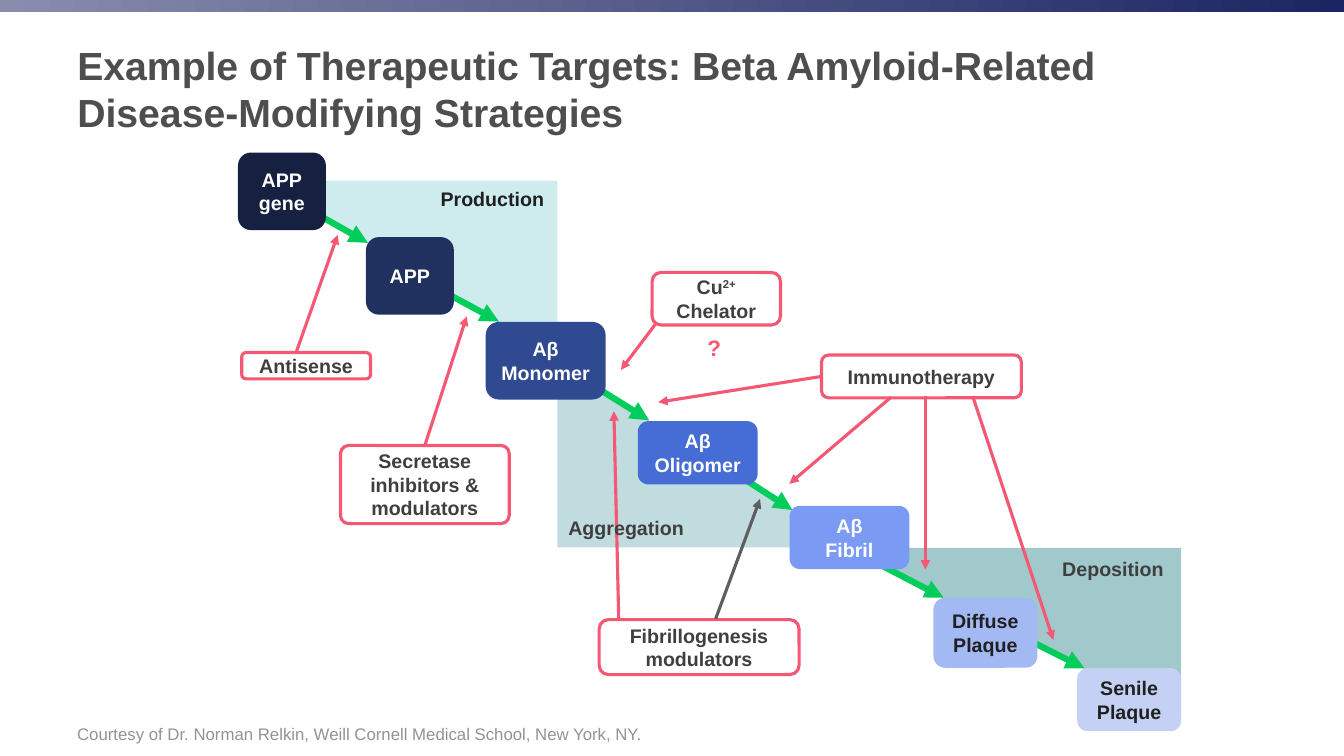
"""Build the slide on beta amyloid therapeutic targets."""
from typing import NamedTuple, Optional

from lxml.etree import SubElement
from pptx import Presentation
from pptx.dml.color import RGBColor
from pptx.enum.shapes import MSO_CONNECTOR, MSO_SHAPE
from pptx.enum.text import MSO_ANCHOR as ANCHOR, PP_ALIGN as ALIGN
from pptx.oxml.ns import qn
from pptx.util import Pt

FONT = "Arial"
BAR_START = RGBColor(0x89, 0x8C, 0xAD)
BAR_END = RGBColor(0x1C, 0x24, 0x63)
TITLE_GREY = RGBColor(0x4D, 0x4E, 0x4D)
DARK = RGBColor(0x3F, 0x3F, 0x3F)
BLACK = RGBColor(0x20, 0x20, 0x20)
WHITE = RGBColor(0xFF, 0xFF, 0xFF)
CREDIT_GREY = RGBColor(0x93, 0x93, 0x93)
PINK = RGBColor(0xF4, 0x58, 0x75)
GREEN = RGBColor(0x00, 0xCD, 0x5C)
ARROW_GREY = RGBColor(0x5E, 0x5E, 0x5E)
PRODUCTION = RGBColor(0xCE, 0xEC, 0xEE)
AGGREGATION = RGBColor(0xC0, 0xDC, 0xDE)
DEPOSITION = RGBColor(0xA1, 0xC8, 0xCA)


class Box(NamedTuple):
    left: float
    top: float
    width: float
    height: float


class Region(NamedTuple):
    box: Box
    fill: RGBColor
    turn: int


class Label(NamedTuple):
    text: str
    box: Box
    color: RGBColor = DARK
    size: int = 14


class Stage(NamedTuple):
    text: str
    box: Box
    fill: RGBColor
    color: RGBColor = WHITE


class Therapy(NamedTuple):
    text: str
    box: Box
    corner: float = 0.167


class Arrow(NamedTuple):
    x1: float
    y1: float
    x2: float
    y2: float
    color: RGBColor = PINK
    width: float = 2.25
    source: Optional[str] = None
    site: int = 0


REGIONS = [
    Region(Box(398.2, 260, 211, 131), AGGREGATION, 0),
    Region(Box(604, 391.4, 239.6, 121), DEPOSITION, 180),
    Region(Box(187.2, 129, 211, 126), PRODUCTION, 180),
]
LABELS = [
    Label("Production", Box(307.5, 129.8, 88.5, 24.5), BLACK),
    Label("Aggregation", Box(398.8, 364.4, 97, 24.5)),
    Label("Deposition", Box(749.3, 394, 91.4, 24.5)),
    Label("?", Box(496.6, 235, 27, 26.6), PINK, 16),
]
STAGES = [
    Stage("APP\ngene", Box(170, 109, 62.8, 55.4), RGBColor(0x16, 0x20, 0x40)),
    Stage("APP", Box(261.4, 169.4, 62.8, 55.4), RGBColor(0x20, 0x31, 0x5F)),
    Stage("Aβ\nMonomer", Box(347, 230, 85.6, 55.4), RGBColor(0x30, 0x4A, 0x91)),
    Stage("Aβ\nOligomer", Box(455.6, 300.8, 85.6, 45.2), RGBColor(0x46, 0x6C, 0xD5)),
    Stage("Aβ\nFibril", Box(564, 361.3, 85.6, 45.2), RGBColor(0x7A, 0x9A, 0xF4)),
    Stage("Diffuse\nPlaque", Box(666.8, 427, 74.2, 50), RGBColor(0xA3, 0xB9, 0xF4), BLACK),
    Stage("Senile\nPlaque", Box(769.5, 477.3, 74.2, 45), RGBColor(0xC4, 0xD1, 0xF4), BLACK),
]
THERAPIES = [
    Therapy("Antisense", Box(172.7, 251.8, 92, 18.8)),
    Therapy("Secretase\ninhibitors &\nmodulators", Box(243.2, 318.2, 120.5, 55.8), 0.104),
    Therapy("Cu^2+\nChelator", Box(465.8, 194.6, 91.7, 37.5)),
    Therapy("Immunotherapy", Box(586.8, 253.6, 142.8, 30.6)),
    Therapy("Fibrillogenesis\nmodulators", Box(428, 442.6, 142.8, 39.3)),
]
ARROWS = [
    Arrow(229.7, 154.8, 262.8, 173.5, GREEN, 4.5),
    Arrow(319, 209.5, 356.4, 229.7, GREEN, 4.5),
    Arrow(425.5, 276.5, 463.7, 300.2, GREEN, 4.5),
    Arrow(531.4, 342, 566, 364.3, GREEN, 4.5),
    Arrow(627, 402.5, 674, 427, GREEN, 4.5),
    Arrow(740.2, 460, 774.7, 477.4, GREEN, 4.5),
    Arrow(211.7, 251.3, 241.2, 167.8),
    Arrow(303.5, 318.2, 333.4, 226, source=THERAPIES[1].text, site=0),
    Arrow(468, 231.8, 443.5, 264.2),
    Arrow(586.8, 268.9, 470.2, 287.3, source=THERAPIES[3].text, site=1),
    Arrow(636.5, 283.7, 563.8, 345.6),
    Arrow(661, 283, 661, 406.8),
    Arrow(694.8, 283, 752.4, 457.2),
    Arrow(442, 442.8, 438.5, 293.8),
    Arrow(511.2, 442, 542.9, 356.4, ARROW_GREY),
]


def points(*values: float) -> list:
    return [Pt(v) for v in values]


def write(s, text: str, *, size=14, color=DARK, bold=True, align=ALIGN.CENTER,
          anchor=ANCHOR.MIDDLE, wrap=True, inset=(7.2, 3.6)) -> None:
    """Write lines as paragraphs; a caret starts a superscript."""
    tf = s.text_frame
    tf.word_wrap = wrap
    tf.vertical_anchor = anchor
    tf.margin_left = tf.margin_right = Pt(inset[0])
    tf.margin_top = tf.margin_bottom = Pt(inset[1])
    for i, line in enumerate(text.split("\n")):
        p = tf.add_paragraph() if i else tf.paragraphs[0]
        p.alignment = align
        for j, part in enumerate(line.split("^")):
            r = p.add_run()
            r.text = part
            r.font.name, r.font.size, r.font.bold = FONT, Pt(size), bold
            r.font.color.rgb = color
            if j:
                r._r.get_or_add_rPr().set("baseline", "30000")


def add_box(shapes, kind: MSO_SHAPE, box: Box, fill: Optional[RGBColor] = None,
            line: Optional[RGBColor] = None):
    s = shapes.add_shape(kind, *points(*box))
    s.shadow.inherit = False
    if fill is None:
        s.fill.background()
    else:
        s.fill.solid()
        s.fill.fore_color.rgb = fill
    if line is None:
        s.line.fill.background()
    else:
        s.line.color.rgb = line
        s.line.width = Pt(2.25)
    return s


def add_arrow(shapes, arrow: Arrow, sources: dict) -> None:
    s = shapes.add_connector(MSO_CONNECTOR.STRAIGHT, *points(*arrow[:4]))
    if arrow.source:
        s.begin_connect(sources[arrow.source], arrow.site)
    s.line.color.rgb = arrow.color
    s.line.width = Pt(arrow.width)
    SubElement(s.line._get_or_add_ln(), qn("a:tailEnd"), type="triangle")
    SubElement(s._element.spPr, qn("a:effectLst"))


def add_label(shapes, label: Label) -> None:
    s = shapes.add_textbox(*points(*label.box))
    write(s, label.text, size=label.size, color=label.color, wrap=False)


def main() -> None:
    prs = Presentation()
    prs.slide_width, prs.slide_height = points(960, 540)
    slide = prs.slides.add_slide(prs.slide_layouts[5])
    shapes = slide.shapes

    title = shapes.title
    title.left, title.top, title.width, title.height = points(48, 16, 846, 94)
    write(title, "Example of Therapeutic Targets: Beta Amyloid-Related "
          "Disease-Modifying Strategies", size=28, color=TITLE_GREY, align=ALIGN.LEFT)

    bar = add_box(shapes, MSO_SHAPE.RECTANGLE, Box(0, 0, 960, 8.6))
    bar.fill.gradient()
    bar.fill.gradient_angle = 0
    for stop, color in zip(bar.fill.gradient_stops, (BAR_START, BAR_END)):
        stop.color.rgb = color

    for region in REGIONS:
        s = add_box(shapes, MSO_SHAPE.RIGHT_TRIANGLE, region.box, region.fill)
        s.rotation = region.turn
    sources = {}
    for therapy in THERAPIES:
        s = add_box(shapes, MSO_SHAPE.ROUNDED_RECTANGLE, therapy.box, line=PINK)
        s.adjustments[0] = therapy.corner
        write(s, therapy.text, inset=(0, 0))
        sources[therapy.text] = s
    for arrow in ARROWS:
        add_arrow(shapes, arrow, sources)
    for label in LABELS:
        add_label(shapes, label)
    for stage in STAGES:
        s = add_box(shapes, MSO_SHAPE.ROUNDED_RECTANGLE, stage.box, stage.fill)
        write(s, stage.text, color=stage.color, wrap=False)

    credit = shapes.add_textbox(*points(48, 500.4, 846, 34.6))
    write(credit, "Courtesy of Dr. Norman Relkin, Weill Cornell Medical School, New York, NY.",
          size=12, color=CREDIT_GREY, bold=False, align=ALIGN.LEFT, anchor=ANCHOR.BOTTOM)
    prs.save("out.pptx")


if __name__ == "__main__":
    main()
